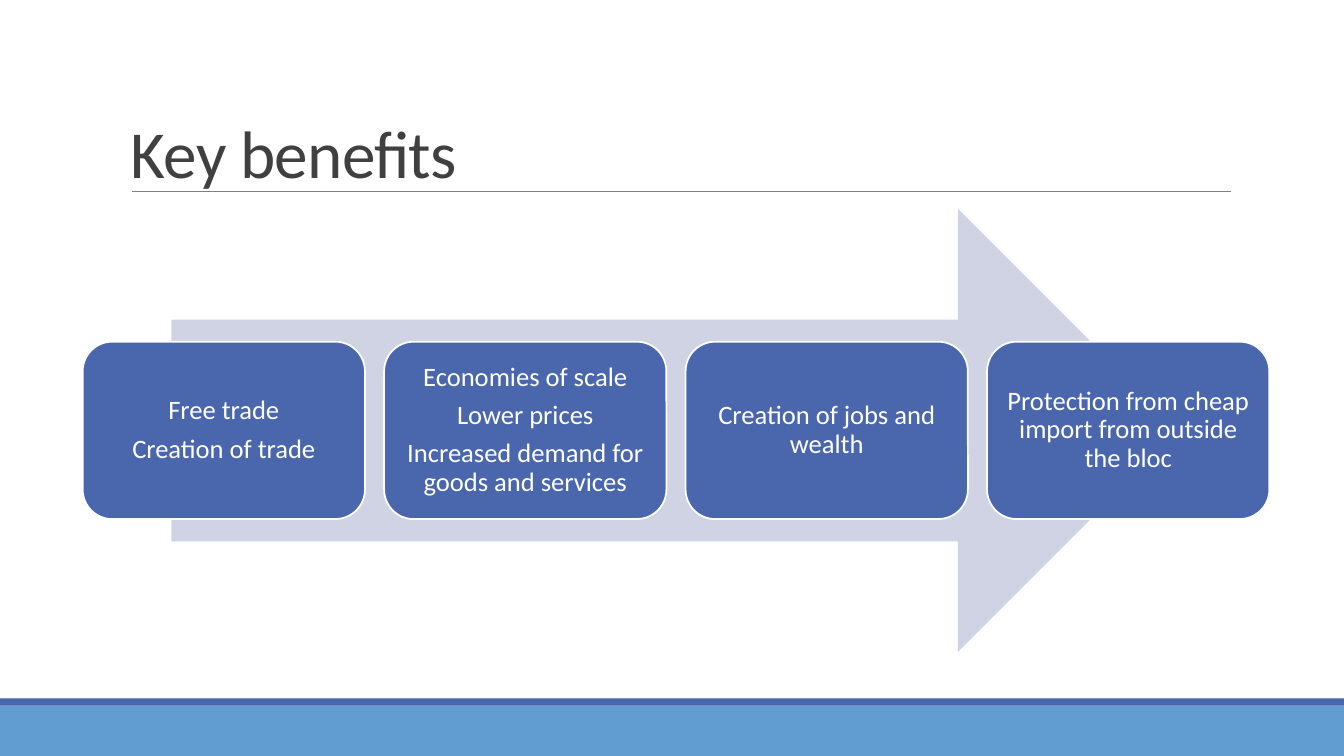
from pptx import Presentation
from pptx import util as u
from pptx.dml.color import RGBColor
from pptx.enum import shapes, text
from pptx.oxml.ns import qn

WHITE = RGBColor(0xFF, 0xFF, 0xFF)
INDIGO = RGBColor(0x4A, 0x66, 0xAC)
SKY = RGBColor(0x62, 0x9D, 0xD1)
PALE = RGBColor(0xD0, 0xD3, 0xE3)
GREY = RGBColor(0x80, 0x80, 0x80)
CHARCOAL = RGBColor(0x40, 0x40, 0x40)

BENEFITS = [
    ["Free trade", "Creation of trade"],
    ["Economies of scale", "Lower prices", "Increased demand for goods and services"],
    ["Creation of jobs and wealth"],
    ["Protection from cheap import from outside the bloc"],
]


def write(frame, lines, size, color, align=text.PP_ALIGN.LEFT,
          anchor=text.MSO_ANCHOR.MIDDLE, inset=(0.1, 0.05), line_spacing=0.9,
          after=0, tracking=None, font="Calibri"):
    """Fill a text frame with one paragraph per line."""
    frame.word_wrap = True
    frame.vertical_anchor = anchor
    frame.margin_left = frame.margin_right = u.Inches(inset[0])
    frame.margin_top = frame.margin_bottom = u.Inches(inset[1])
    for index, line in enumerate(lines):
        para = frame.add_paragraph() if index else frame.paragraphs[0]
        para.alignment = align
        para.line_spacing = line_spacing
        para.space_after = u.Pt(after)
        span = para.add_run()
        span.text = line
        span.font.name = font
        span.font.size = u.Pt(size)
        span.font.color.rgb = color
        if tracking is not None:
            span.font._element.set("spc", str(round(tracking * 100)))


class SlideBuilder:
    """Holds the current slide and draws its elements."""

    def __init__(self, page):
        self.page = page

    def shape(self, kind, left, top, width, height, fill, line=None, line_width=1.25):
        box = self.page.shapes.add_shape(
            kind, u.Inches(left), u.Inches(top), u.Inches(width), u.Inches(height))
        box.shadow.inherit = False
        box.fill.solid()
        box.fill.fore_color.rgb = fill
        if line is None:
            box.line.fill.background()
        else:
            box.line.color.rgb = line
            box.line.width = u.Pt(line_width)
        return box

    def rule(self, left, right, top, color, width):
        line = self.page.shapes.add_connector(
            shapes.MSO_CONNECTOR.STRAIGHT, u.Inches(left), u.Inches(top),
            u.Inches(right), u.Inches(top))
        line.line.color.rgb = color
        line.line.width = u.Pt(width)
        properties = line._element.spPr
        properties.append(properties.makeelement(qn("a:effectLst"), {}))

    def label(self, left, top, width, height, lines, **style):
        box = self.page.shapes.add_textbox(
            u.Inches(left), u.Inches(top), u.Inches(width), u.Inches(height))
        write(box.text_frame, lines, **style)

    def card(self, left, top, width, height, lines):
        box = self.shape(shapes.MSO_SHAPE.ROUNDED_RECTANGLE, left, top, width, height,
                         INDIGO, line=WHITE)
        write(box.text_frame, lines, size=19, color=WHITE,
              align=text.PP_ALIGN.CENTER, inset=(0.08, 0.08), after=6.65)


def main():
    deck = Presentation()
    deck.slide_width, deck.slide_height = u.Inches(13.33), u.Inches(7.5)
    builder = SlideBuilder(deck.slides.add_slide(deck.slide_layouts[6]))

    # Footer bands
    builder.shape(shapes.MSO_SHAPE.RECTANGLE, 0, 7, 13.33, 0.5, SKY)
    builder.shape(shapes.MSO_SHAPE.RECTANGLE, 0, 6.93, 13.33, 0.07, INDIGO)

    # Title and its rule
    builder.rule(1.31, 12.21, 1.9, GREY, 0.5)
    builder.label(1.2, 0.37, 11, 1.59, ["Key benefits"], size=48, color=CHARCOAL,
                  anchor=text.MSO_ANCHOR.BOTTOM, line_spacing=0.85, tracking=-0.5)

    # Arrow behind the benefit cards
    builder.shape(shapes.MSO_SHAPE.RIGHT_ARROW, 1.7, 2.07, 10, 4.4, PALE)
    for index, lines in enumerate(BENEFITS):
        builder.card(0.82 + index * 2.99, 3.39, 2.8, 1.76, lines)

    deck.save("out.pptx")


if __name__ == "__main__":
    main()
